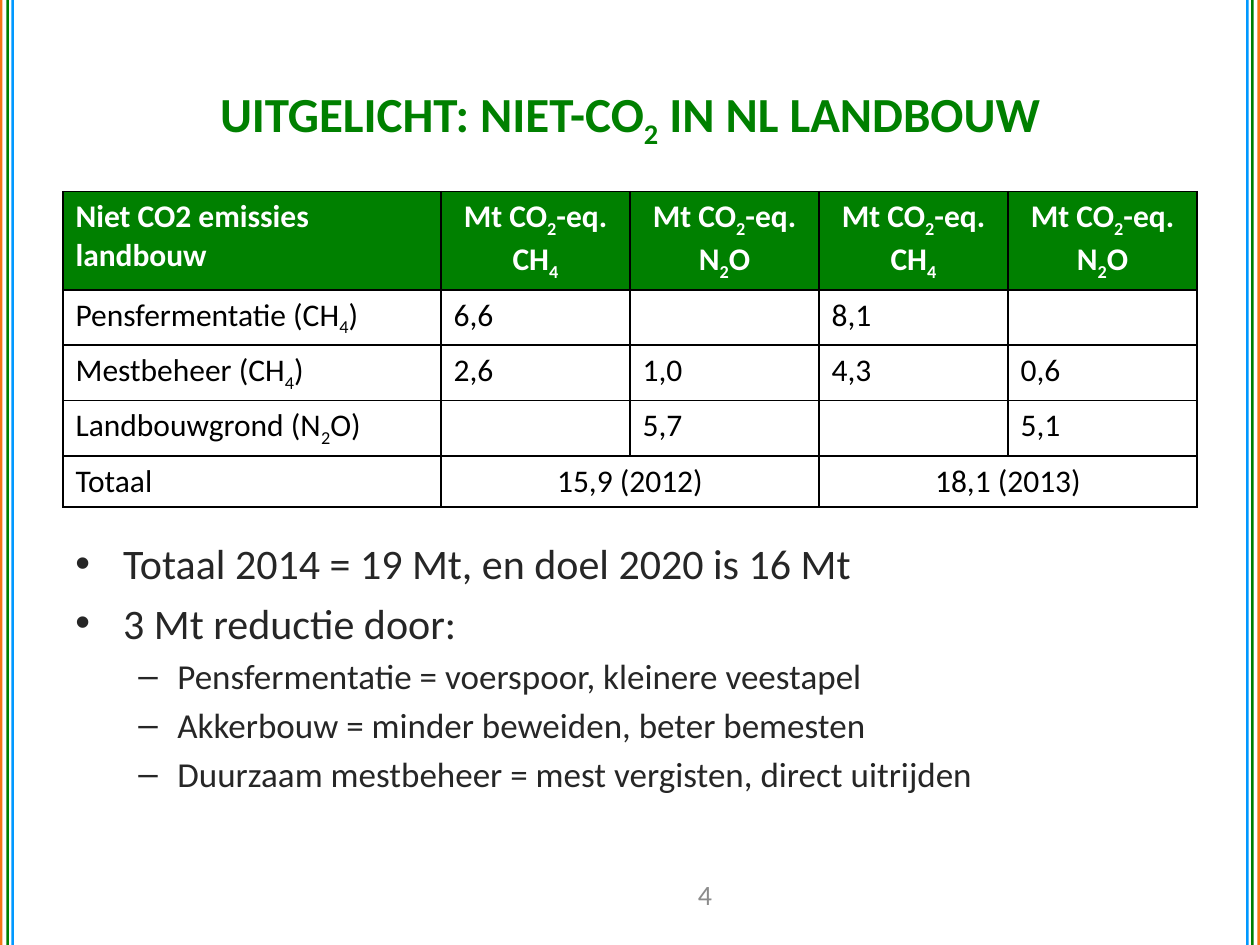
from lxml.etree import SubElement
from pptx import Presentation
from pptx.dml.color import RGBColor
from pptx.enum.shapes import MSO_SHAPE
from pptx.enum.text import MSO_ANCHOR, PP_ALIGN
from pptx.oxml.ns import qn
from pptx.util import Inches, Pt

COLORS = {
    "orange": "F67616", "green": "008000", "blue": "0099FF", "white": "FFFFFF",
    "black": "000000", "body": "262626", "gray": "8C8C8C",
}
FONT = "Calibri"

# Text between underscores is set as subscript.
TITLE = "UITGELICHT: NIET-CO_2_ IN NL LANDBOUW"
METHANE = ["Mt CO_2_-eq.", "CH_4_"]
NITROUS_OXIDE = ["Mt CO_2_-eq.", "N_2_O"]
HEADER = [["Niet CO2 emissies landbouw"]] + [METHANE, NITROUS_OXIDE] * 2
ROWS = [
    ["Pensfermentatie (CH_4_)", "6,6", "", "8,1", ""],
    ["Mestbeheer (CH_4_)", "2,6", "1,0", "4,3", "0,6"],
    ["Landbouwgrond (N_2_O)", "", "5,7", "", "5,1"],
    ["Totaal", "15,9 (2012)", None, "18,1 (2013)", None],  # None: merged to the left
]
COLUMN_WIDTHS = [3, 1.5, 1.5, 1.5, 1.5]
ROW_HEIGHTS = [0.78, 0.44, 0.44, 0.44, 0.4]
BULLETS = [
    (0, "Totaal 2014 = 19 Mt, en doel 2020 is 16 Mt"),
    (0, "3 Mt reductie door:"),
    (1, "Pensfermentatie = voerspoor, kleinere veestapel"),
    (1, "Akkerbouw = minder beweiden, beter bemesten"),
    (1, "Duurzaam mestbeheer = mest vergisten, direct uitrijden"),
]
# bullet, left margin, hanging indent, text size, space before
LEVELS = [("•", 0.38, 0.38, 24, 5), ("–", 0.81, 0.31, 20, 4)]
STRIPES = [("orange", 0), ("green", 0.05), ("blue", 0.09)]
STRIPE_WIDTH = 0.02


def color(name):
    return RGBColor.from_string(COLORS[name])


def write(paragraph, text, size, color_name, bold=False, align=PP_ALIGN.LEFT):
    paragraph.alignment = align
    paragraph.font.name = FONT
    paragraph.font.size = Pt(size)
    paragraph.font.bold = bold
    paragraph.font.color.rgb = color(color_name)
    for index, part in enumerate(text.split("_")):
        if part:
            run = paragraph.add_run()
            run.text = part
            if index % 2:
                run._r.get_or_add_rPr().set("baseline", "-25000")


def add_text_box(slide, left, top, width, height, anchor=MSO_ANCHOR.TOP):
    box = slide.shapes.add_textbox(Inches(left), Inches(top), Inches(width), Inches(height))
    box.text_frame.word_wrap = True
    box.text_frame.vertical_anchor = anchor
    return box.text_frame


def add_stripes(slide, slide_width):
    for name, offset in STRIPES:
        for left in (offset, slide_width - STRIPE_WIDTH - offset):
            stripe = slide.shapes.add_shape(
                MSO_SHAPE.RECTANGLE, Inches(left), 0, Inches(STRIPE_WIDTH), Inches(7.5))
            stripe.shadow.inherit = False
            stripe.fill.solid()
            stripe.fill.fore_color.rgb = color(name)
            stripe.line.fill.background()


def add_borders(cell):
    properties = cell._tc.get_or_add_tcPr()
    for side in ("a:lnL", "a:lnR", "a:lnT", "a:lnB"):
        line = SubElement(properties, qn(side), w=str(Pt(1)))
        fill = SubElement(line, qn("a:solidFill"))
        SubElement(fill, qn("a:srgbClr"), val=COLORS["black"])


def add_emission_table(slide):
    table = slide.shapes.add_table(
        len(ROW_HEIGHTS), len(COLUMN_WIDTHS), Inches(0.5), Inches(1.52),
        Inches(sum(COLUMN_WIDTHS)), Inches(sum(ROW_HEIGHTS))).table
    table.first_row = table.horz_banding = False
    for column, width in zip(table.columns, COLUMN_WIDTHS):
        column.width = Inches(width)
    for row, height in zip(table.rows, ROW_HEIGHTS):
        row.height = Inches(height)

    body = [[None if text is None else [text] for text in row] for row in ROWS]
    for r, row in enumerate([HEADER] + body):
        is_header = r == 0
        for c, lines in enumerate(row):
            cell = table.cell(r, c)
            add_borders(cell)
            if is_header:
                cell.fill.solid()
                cell.fill.fore_color.rgb = color("green")
            else:
                cell.fill.background()
            if lines is None:
                table.cell(r, c - 1).merge(cell)
                continue
            centered = c > 0 and (is_header or r == len(ROWS))
            frame = cell.text_frame
            for index, line in enumerate(lines):
                paragraph = frame.add_paragraph() if index else frame.paragraphs[0]
                write(paragraph, line, 18, "white" if is_header else "black", is_header,
                      PP_ALIGN.CENTER if centered else PP_ALIGN.LEFT)


def add_bullets(slide):
    frame = add_text_box(slide, 0.5, 4.22, 9, 2.28)
    for index, (level, text) in enumerate(BULLETS):
        bullet, margin, hanging, size, space = LEVELS[level]
        paragraph = frame.add_paragraph() if index else frame.paragraphs[0]
        paragraph.level = level
        if index:
            paragraph.space_before = Pt(space)
        properties = paragraph._p.get_or_add_pPr()
        properties.set("marL", str(Inches(margin)))
        properties.set("indent", str(-Inches(hanging)))
        SubElement(properties, qn("a:buFont"), typeface="Arial")
        SubElement(properties, qn("a:buChar"), char=bullet)
        write(paragraph, text, size, "body")


def main():
    presentation = Presentation()
    presentation.slide_width = Inches(10)
    presentation.slide_height = Inches(7.5)
    slide = presentation.slides.add_slide(presentation.slide_layouts[6])

    add_stripes(slide, 10)
    add_emission_table(slide)
    number = add_text_box(slide, 5.16, 6.9, 0.87, 0.4, MSO_ANCHOR.MIDDLE)
    write(number.paragraphs[0], "4", 16, "gray", align=PP_ALIGN.CENTER)
    title = add_text_box(slide, 0.5, 0.3, 9, 1.25, MSO_ANCHOR.MIDDLE)
    write(title.paragraphs[0], TITLE, 28, "green", True, PP_ALIGN.CENTER)
    add_bullets(slide)
    presentation.save("out.pptx")


if __name__ == "__main__":
    main()
